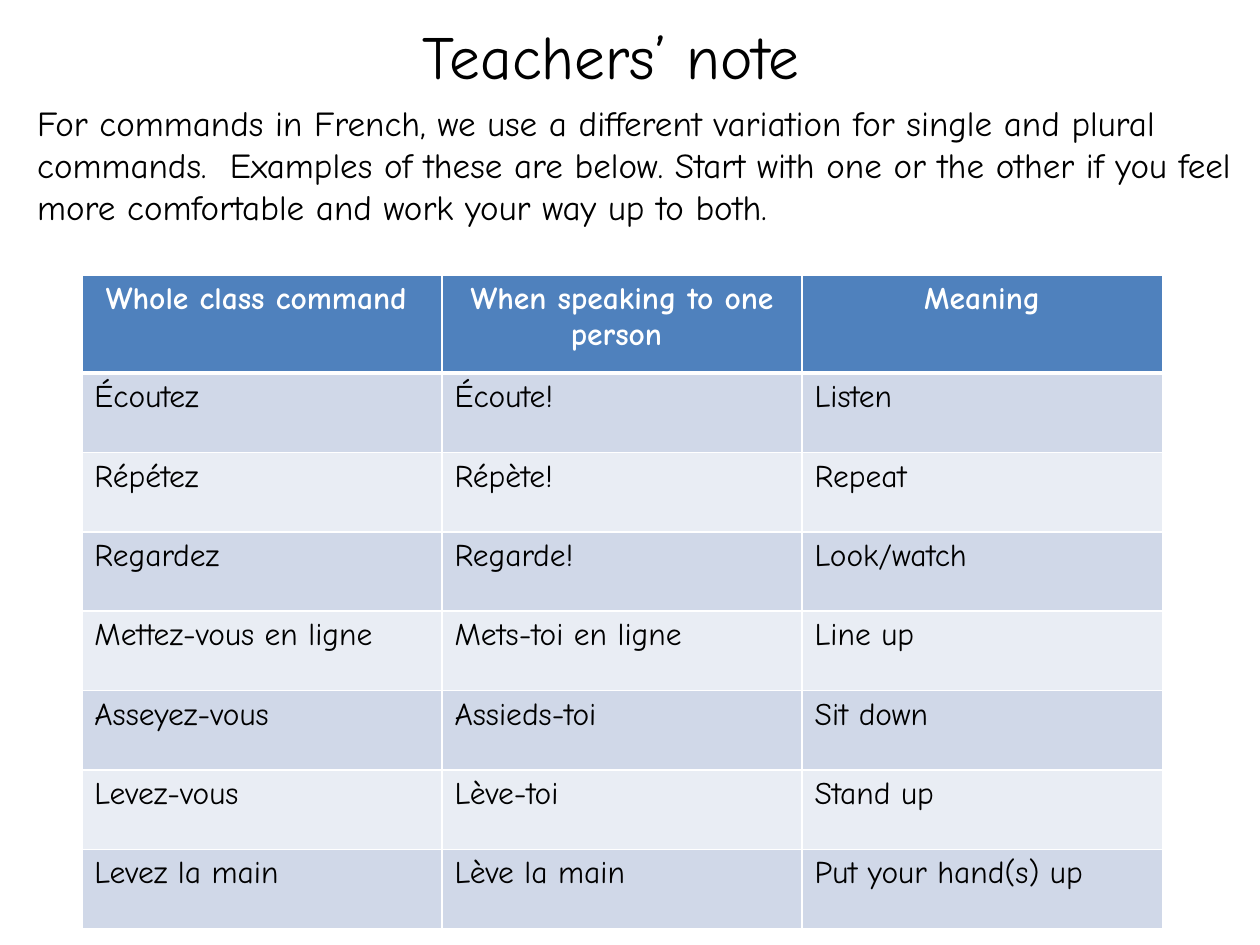
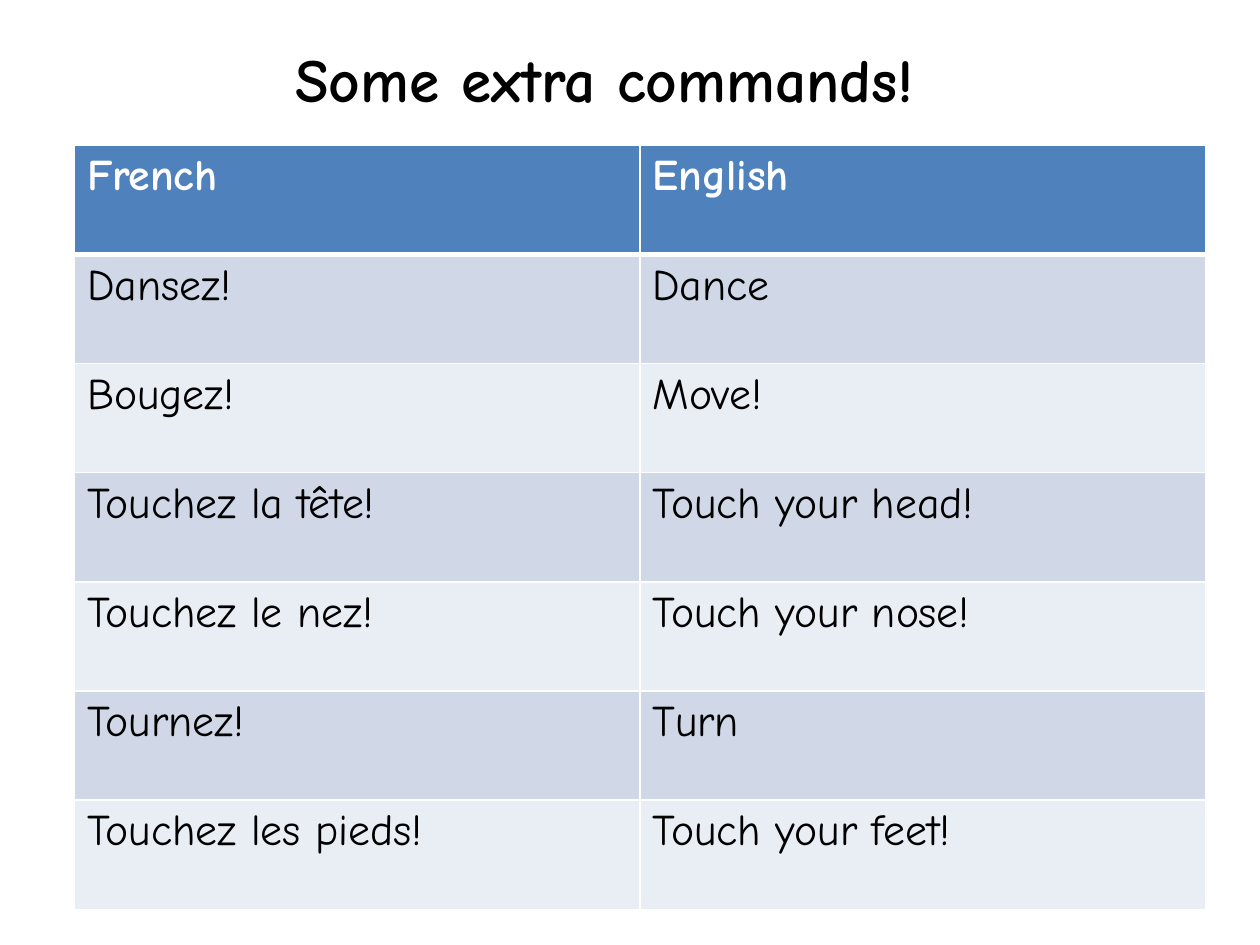
"""Build two slides of French classroom commands."""
from dataclasses import dataclass

from lxml.etree import SubElement
from pptx import Presentation
from pptx.dml.color import RGBColor
from pptx.enum.text import MSO_ANCHOR, MSO_AUTO_SIZE, PP_ALIGN
from pptx.oxml.ns import qn
from pptx.util import Cm, Pt

FONT = "Comic Neue"
BLACK = RGBColor(0x00, 0x00, 0x00)
WHITE = RGBColor(0xFF, 0xFF, 0xFF)
BLUE = RGBColor(0x4F, 0x81, 0xBD)
BANDS = (RGBColor(0xE9, 0xED, 0xF4), RGBColor(0xD0, 0xD8, 0xE8))
THIN, THICK = Pt(1), Pt(3)


@dataclass(frozen=True)
class Box:
    left: float
    top: float
    width: float
    height: float

    def frame(self) -> tuple:
        return tuple(Cm(n) for n in (self.left, self.top, self.width, self.height))


@dataclass(frozen=True)
class Title:
    text: str
    box: Box
    anchor: MSO_ANCHOR
    bold: bool = False


@dataclass(frozen=True)
class Grid:
    rows: tuple
    left: float
    top: float
    col: float
    head: float
    row: float
    size: int
    align: PP_ALIGN


NOTE = Title("Teachers’ note", Box(0.89, -0.48, 22.86, 3.18), MSO_ANCHOR.MIDDLE)
EXTRA = Title("Some extra commands! ", Box(5.11, 0.71, 14.6, 1.75), MSO_ANCHOR.TOP, True)
INTRO = (
    "For commands in French, we use a different variation for single and plural "
    "commands.  Examples of these are below. Start with one or the other if you "
    "feel more comfortable and work your way up to both."
)
INTRO_BOX = Box(0.5, 1.93, 24.9, 3.81)
CLASS = Grid(
    (
        ("Whole class command ", "When speaking to one person ", "Meaning"),
        ("Écoutez", "Écoute!", "Listen"),
        ("Répétez", "Répète!", "Repeat"),
        ("Regardez", "Regarde!", "Look/watch"),
        ("Mettez-vous en ligne", "Mets-toi en ligne", "Line up"),
        ("Asseyez-vous", "Assieds-toi", "Sit down"),
        ("Levez-vous", "Lève-toi", "Stand up"),
        ("Levez la main", "Lève la main", "Put your hand(s) up"),
    ),
    left=1.65, top=5.54, col=7.26, head=1.98, row=1.6, size=18, align=PP_ALIGN.CENTER,
)
MOVES = Grid(
    (
        ("French", "English"),
        ("Dansez!", "Dance"),
        ("Bougez!", "Move!"),
        ("Touchez la tête!", "Touch your head!"),
        ("Touchez le nez!", "Touch your nose!"),
        ("Tournez!", "Turn"),
        ("Touchez les pieds!", "Touch your feet!"),
    ),
    left=1.5, top=2.93, col=11.4, head=2.2, row=2.2, size=25, align=PP_ALIGN.LEFT,
)


def write(frame, text: str, size: int, color: RGBColor, bold: bool, align: PP_ALIGN) -> None:
    frame.text = text
    line = frame.paragraphs[0]
    line.alignment = align
    font = line.font
    font.name, font.size, font.bold = FONT, Pt(size), bold
    font.color.rgb = color


def add_page(deck, title: Title):
    page = deck.slides.add_slide(deck.slide_layouts[5])
    shape = page.shapes.title
    shape.left, shape.top, shape.width, shape.height = title.box.frame()
    frame = shape.text_frame
    frame.auto_size = MSO_AUTO_SIZE.NONE
    frame.vertical_anchor = title.anchor
    write(frame, title.text, 35, BLACK, title.bold, PP_ALIGN.CENTER)
    return page


def add_edges(cell, upper: int, lower: int) -> None:
    props = cell._tc.get_or_add_tcPr()
    for side, width in (("L", THIN), ("R", THIN), ("T", upper), ("B", lower)):
        edge = SubElement(props, qn(f"a:ln{side}"), w=str(width))
        fill = SubElement(edge, qn("a:solidFill"))
        SubElement(fill, qn("a:srgbClr"), val=str(WHITE))


def add_grid(page, grid: Grid) -> None:
    count, cols = len(grid.rows), len(grid.rows[0])
    box = Box(grid.left, grid.top, cols * grid.col, grid.head + (count - 1) * grid.row)
    table = page.shapes.add_table(count, cols, *box.frame()).table
    for col in table.columns:
        col.width = Cm(grid.col)
    for r, texts in enumerate(grid.rows):
        head = r == 0
        table.rows[r].height = Cm(grid.head if head else grid.row)
        for c, text in enumerate(texts):
            cell = table.cell(r, c)
            add_edges(cell, THICK if r == 1 else THIN, THICK if head else THIN)
            cell.fill.solid()
            cell.fill.fore_color.rgb = BLUE if head else BANDS[r % 2]
            write(cell.text_frame, text, grid.size, WHITE if head else BLACK, head,
                  grid.align if head else PP_ALIGN.LEFT)


def main() -> None:
    deck = Presentation()
    deck.slide_width, deck.slide_height = Cm(25.4), Cm(19.05)
    page = add_page(deck, NOTE)
    frame = page.shapes.add_textbox(*INTRO_BOX.frame()).text_frame
    frame.word_wrap = True
    write(frame, INTRO, 20, BLACK, False, PP_ALIGN.LEFT)
    add_grid(page, CLASS)
    add_grid(add_page(deck, EXTRA), MOVES)
    deck.save("out.pptx")


if __name__ == "__main__":
    main()
